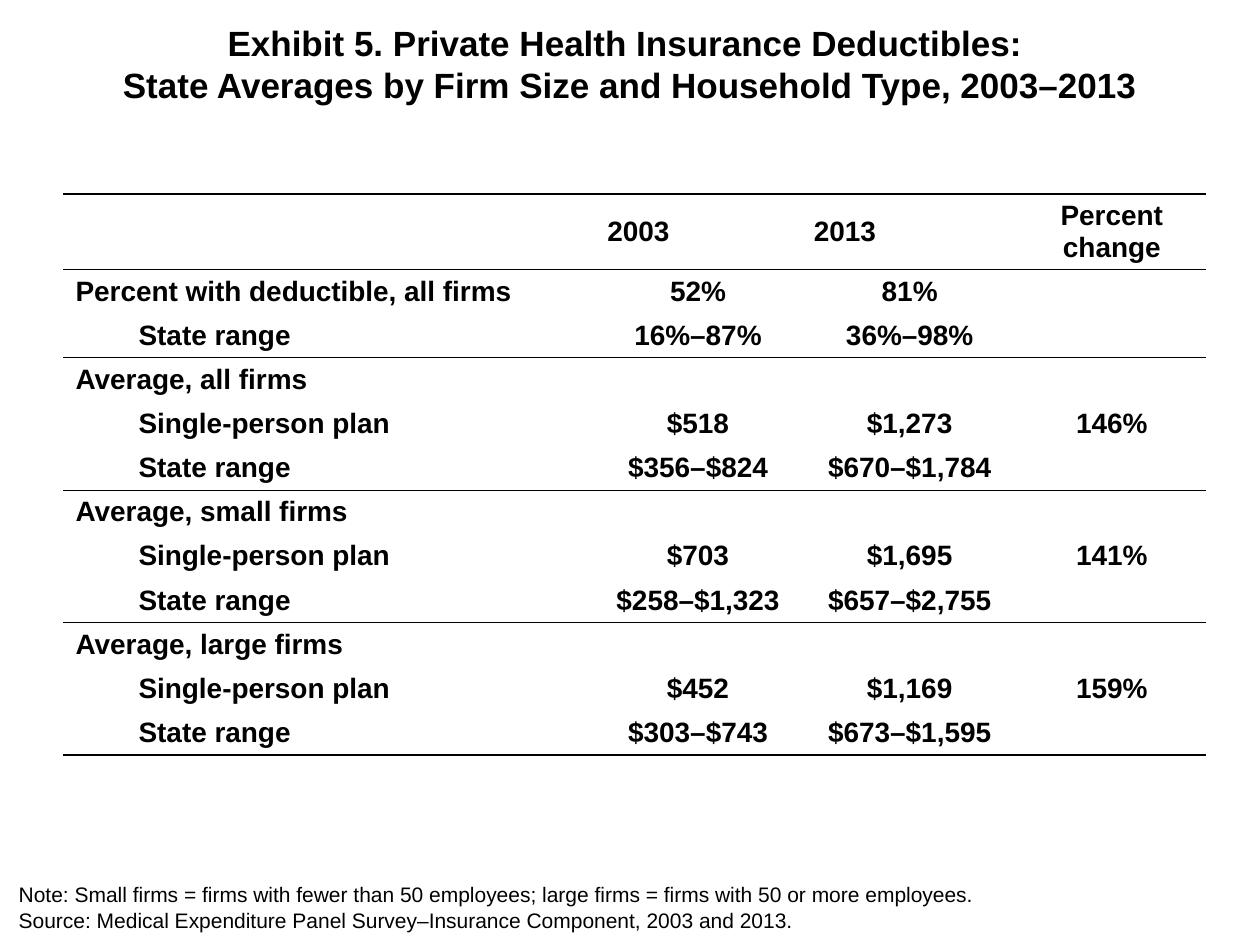
from lxml import etree
from pptx import Presentation
from pptx.dml.color import RGBColor
from pptx.enum import text
from pptx.oxml.ns import qn
from pptx.util import Inches, Pt

COLORS = {"ink": "000000", "paper": "FFFFFF"}
NO_GRID_STYLE = "{2D5ABB26-0587-4C30-8999-92F81FD0307C}"
LEFT, CENTER = text.PP_ALIGN.LEFT, text.PP_ALIGN.CENTER
MIDDLE = text.MSO_ANCHOR.MIDDLE
THICK, THIN = 1.5, 0.5
HEADER_HEIGHT, ROW_HEIGHT = 0.6, 0.35

TITLE = ("Exhibit 5. Private Health Insurance Deductibles: \v"
         "State Averages by Firm Size and Household Type, 2003–2013")
NOTES = [
    "Note: Small firms = firms with fewer than 50 employees; "
    "large firms = firms with 50 or more employees.",
    "Source: Medical Expenditure Panel Survey–Insurance Component, 2003 and 2013.",
]
HEADER = ["", "2003", "2013", "Percent change"]
# Each group ends with a rule.
GROUPS = [
    [["Percent with deductible, all firms", "52%", "81%", ""],
     ["State range", "16%–87%", "36%–98%", ""]],
    [["Average, all firms", "", "", ""],
     ["Single-person plan", "$518", "$1,273", "146%"],
     ["State range", "$356–$824", "$670–$1,784", ""]],
    [["Average, small firms", "", "", ""],
     ["Single-person plan", "$703", "$1,695", "141%"],
     ["State range", "$258–$1,323", "$657–$2,755", ""]],
    [["Average, large firms", "", "", ""],
     ["Single-person plan", "$452", "$1,169", "159%"],
     ["State range", "$303–$743", "$673–$1,595", ""]],
]
COLUMN_WIDTHS = [4.22, 1.64, 1.72, 1.49]


def write(p, words, size=16, bold=False, align=LEFT, indent=0):
    """Fill a paragraph, turning each vertical tab into a line break."""
    p.text = words
    p.alignment = align
    if indent:
        pPr = p._p.get_or_add_pPr()
        pPr.set("marL", str(Inches(indent)))
        pPr.set("indent", "0")
    for r in p.runs:
        r.font.name = "Arial"
        r.font.size = Pt(size)
        r.font.bold = bold
        r.font.color.rgb = RGBColor.from_string(COLORS["ink"])


def set_borders(cell, top=0, bottom=0):
    """Draw the cell's edges; a width of 0 leaves an edge out."""
    tcPr = cell._tc.get_or_add_tcPr()
    edges = {"a:lnL": 0, "a:lnR": 0, "a:lnT": top, "a:lnB": bottom}
    for i, (tag, width) in enumerate(edges.items()):
        ln = etree.Element(qn(tag), w=str(Pt(width)))
        if width:
            fill = etree.SubElement(ln, qn("a:solidFill"))
            etree.SubElement(fill, qn("a:srgbClr"), val=COLORS["ink"])
        else:
            etree.SubElement(ln, qn("a:noFill"))
        tcPr.insert(i, ln)


class Exhibit:
    def __init__(self, prs):
        self.slide = prs.slides.add_slide(prs.slide_layouts[5])
        fill = self.slide.background.fill
        fill.solid()
        fill.fore_color.rgb = RGBColor.from_string(COLORS["paper"])

    def title(self, words, left, top, width, height):
        sp = self.slide.shapes.title
        sp.left, sp.top = Inches(left), Inches(top)
        sp.width, sp.height = Inches(width), Inches(height)
        tf = sp.text_frame
        tf.auto_size = text.MSO_AUTO_SIZE.NONE
        tf.vertical_anchor = MIDDLE
        write(tf.paragraphs[0], words, size=20, bold=True, align=CENTER)

    def notes(self, lines, left, top, width, height):
        sp = self.slide.shapes.add_textbox(
            Inches(left), Inches(top), Inches(width), Inches(height))
        tf = sp.text_frame
        tf.word_wrap = True
        for i, line in enumerate(lines):
            p = tf.add_paragraph() if i else tf.paragraphs[0]
            write(p, line, size=12)

    def cell(self, cell, words, align, indent=0, side=0.1, top=0, bottom=0):
        cell.fill.background()
        cell.vertical_anchor = MIDDLE
        cell.margin_left = cell.margin_right = Inches(side)
        cell.margin_top = cell.margin_bottom = Inches(0.01)
        write(cell.text_frame.paragraphs[0], words, bold=True,
              align=align, indent=indent)
        set_borders(cell, top, bottom)

    def table(self, header, groups, widths, left, top):
        n_rows = 1 + sum(len(group) for group in groups)
        height = HEADER_HEIGHT + ROW_HEIGHT * (n_rows - 1)
        frame = self.slide.shapes.add_table(
            n_rows, len(widths), Inches(left), Inches(top),
            Inches(sum(widths)), Inches(height))
        table = frame.table
        table.first_row = table.horz_banding = False
        table._tbl.tblPr.find(qn("a:tableStyleId")).text = NO_GRID_STYLE
        for column, width in zip(table.columns, widths):
            column.width = Inches(width)
        for i, row in enumerate(table.rows):
            row.height = Inches(ROW_HEIGHT if i else HEADER_HEIGHT)

        for col, words in enumerate(header):
            align = CENTER if col == len(header) - 1 else LEFT
            self.cell(table.cell(0, col), words, align, top=THICK, bottom=THIN)
        row = 1
        for group in groups:
            for i, (label, *values) in enumerate(group):
                bottom = 0
                if i == len(group) - 1:
                    bottom = THICK if row == n_rows - 1 else THIN
                self.cell(table.cell(row, 0), label, LEFT,
                          indent=0.5 if i else 0, bottom=bottom)
                for col, value in enumerate(values, 1):
                    self.cell(table.cell(row, col), value, CENTER,
                              side=0.01, bottom=bottom)
                row += 1


def main():
    prs = Presentation()
    prs.slide_width, prs.slide_height = Inches(10), Inches(7.5)
    exhibit = Exhibit(prs)
    exhibit.table(HEADER, GROUPS, COLUMN_WIDTHS, 0.5, 1.54)
    exhibit.title(TITLE, 0, 0.1, 10, 0.8)
    exhibit.notes(NOTES, 0.05, 6.95, 9.95, 0.5)
    prs.save("out.pptx")


if __name__ == "__main__":
    main()
